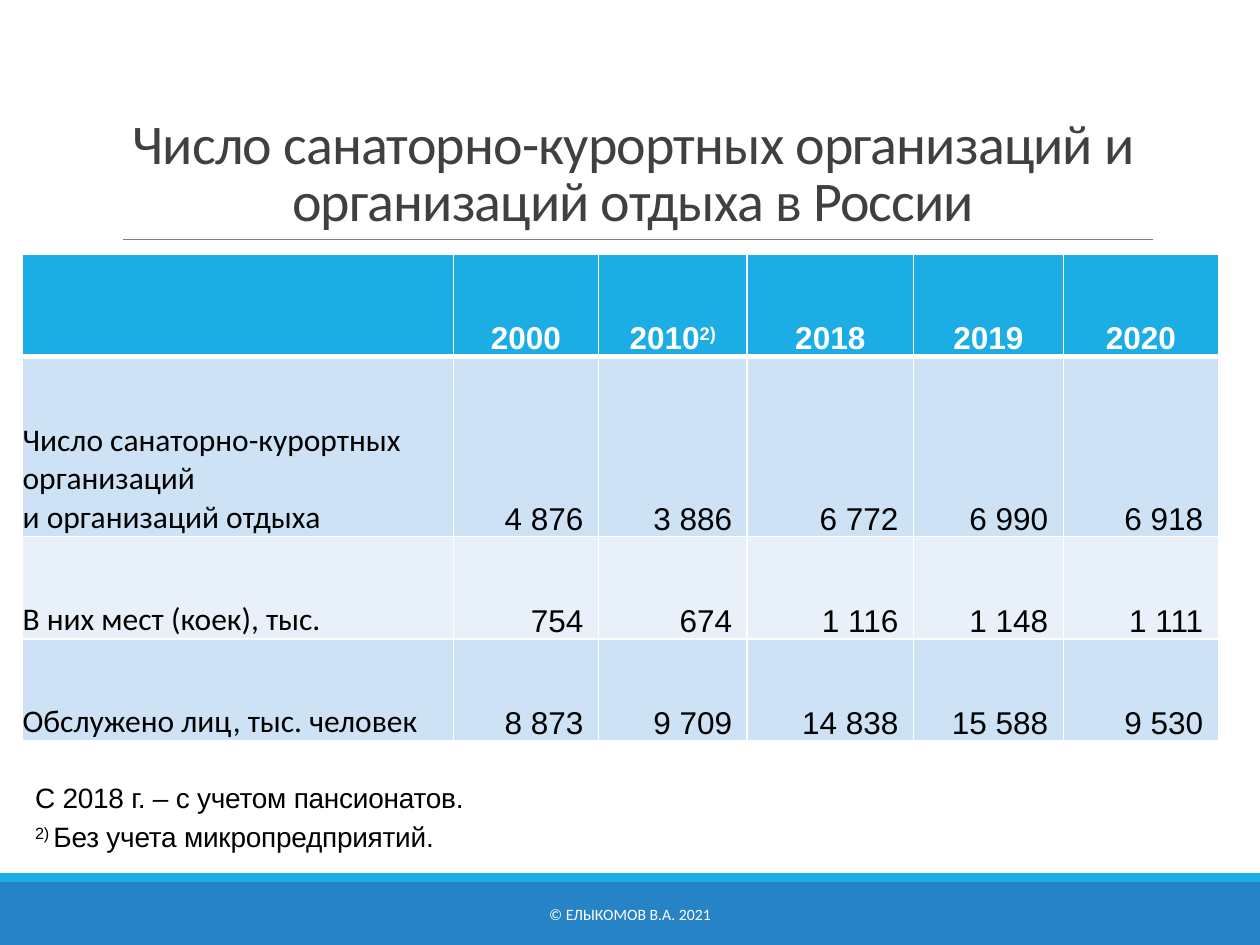
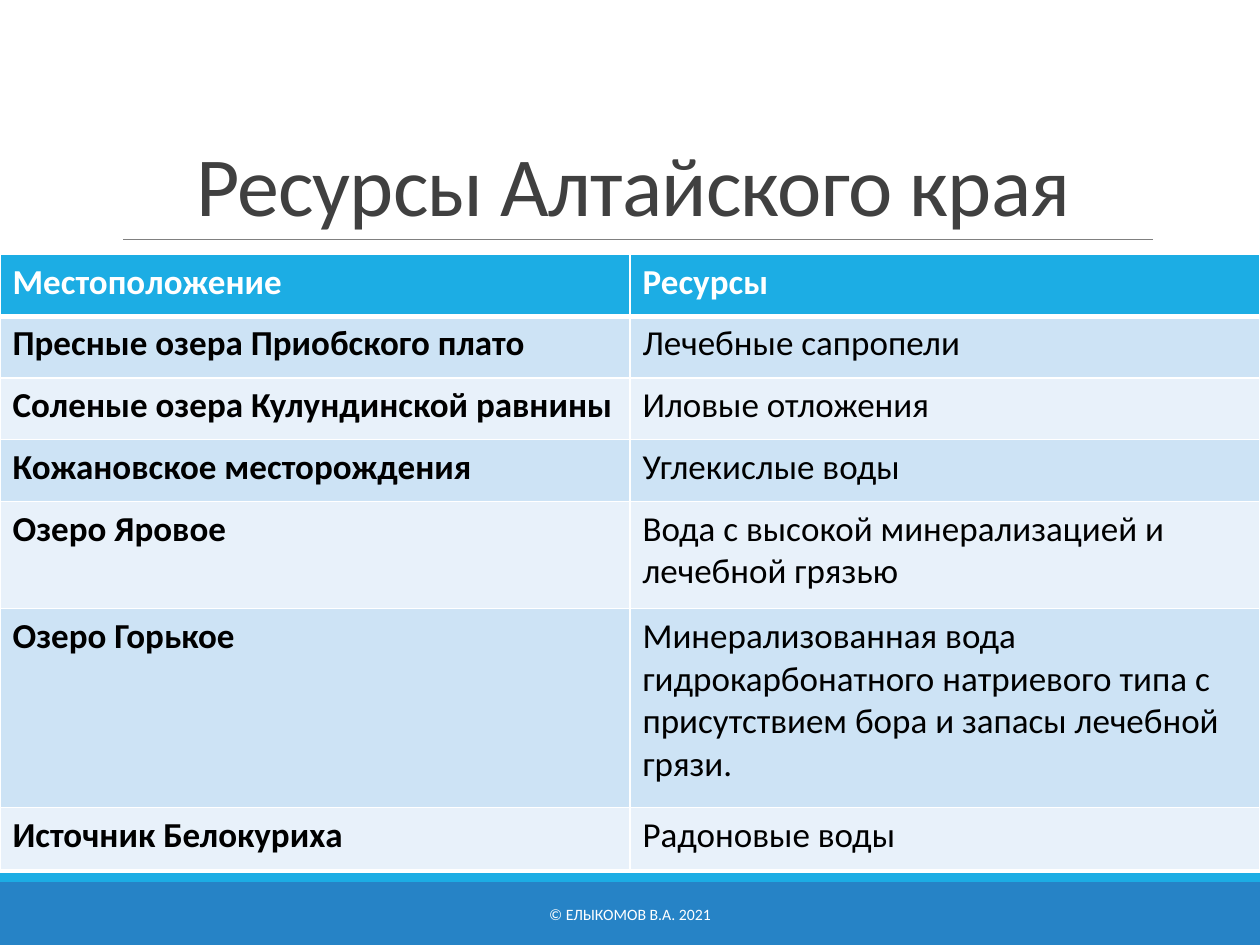
from dataclasses import dataclass
from typing import NamedTuple, Optional

from lxml.etree import SubElement
from pptx import Presentation
from pptx.dml.color import RGBColor
from pptx.enum.shapes import MSO_CONNECTOR, MSO_SHAPE
from pptx.enum.text import MSO_ANCHOR, PP_ALIGN
from pptx.oxml import parse_xml
from pptx.oxml.ns import nsdecls, qn
from pptx.util import Inches, Pt

COLORS = {
    "band": "2683C6",
    "accent": "1CADE4",
    "rule": "808080",
    "title": "404040",
    "text": "000000",
    "white": "FFFFFF",
    "odd": "CDE3F5",
    "even": "E8F1FA",
}
HEAD_FONT, DATA_FONT = "Calibri", "Arial"
WIDTH, HEIGHT = Inches(10), Inches(7.5)
COL, ROW = WIDTH // 100, HEIGHT // 75


class Box(NamedTuple):
    col: float
    row: float
    cols: float
    rows: float

    def emu(self) -> tuple[int, ...]:
        return (round(self.col * COL), round(self.row * ROW),
                round(self.cols * COL), round(self.rows * ROW))


class Style(NamedTuple):
    size: float
    font: str = HEAD_FONT
    color: str = "text"
    bold: bool = False
    spacing: float = 0


class Run(NamedTuple):
    text: str
    raised: bool = False


class Band(NamedTuple):
    box: Box
    color: str


@dataclass(frozen=True)
class Para:
    runs: tuple[Run, ...]
    style: Style
    align: PP_ALIGN = PP_ALIGN.LEFT
    line: Optional[float] = None
    before: float = 0
    after: float = 0
    hanging: float = 0


@dataclass(frozen=True)
class Cell:
    para: Para
    margins: Optional[tuple[float, float, float, float]] = None
    anchor: MSO_ANCHOR = MSO_ANCHOR.TOP


@dataclass(frozen=True)
class Grid:
    left: float
    top: float
    cols: tuple[float, ...]
    rows: tuple[float, ...]
    cells: list[list[Optional[Cell]]]


BANDS = (Band(Box(0, 70, 100, 5), "band"), Band(Box(0, 69.3, 100, 0.7), "accent"))
RULE = Box(9.8, 19, 81.7, 0)
TITLE = Box(9, 3.1, 82.5, 15.9)
FOOTER = Box(30.2, 70.6, 39.6, 4)
NOTES = Box(1.8, 61.1, 38.3, 7)


def rgb(name: str) -> RGBColor:
    return RGBColor.from_string(COLORS[name])


def write_para(p, para: Para) -> None:
    p.alignment = para.align
    p.space_before, p.space_after = Pt(para.before), Pt(para.after)
    if para.line:
        p.line_spacing = para.line
    if para.hanging:
        indent = round(para.hanging * COL)
        pPr = p._p.get_or_add_pPr()
        pPr.set("marL", str(indent))
        pPr.set("indent", str(-indent))
    for run in para.runs:
        for i, text in enumerate(run.text.split("\n")):
            if i:
                p.add_line_break()
            r = p.add_run()
            r.text = text
            style, font = para.style, r.font
            font.size, font.name, font.bold = Pt(style.size), style.font, style.bold
            font.color.rgb = rgb(style.color)
            rPr = r._r.get_or_add_rPr()
            if style.spacing:
                rPr.set("spc", str(round(style.spacing * 100)))
            if run.raised:
                rPr.set("baseline", "30000")


def add_text(slide, box: Box, paras: list[Para], anchor=MSO_ANCHOR.TOP) -> None:
    tf = slide.shapes.add_textbox(*box.emu()).text_frame
    tf.word_wrap = True
    tf.vertical_anchor = anchor
    for i, para in enumerate(paras):
        write_para(tf.add_paragraph() if i else tf.paragraphs[0], para)


def add_band(slide, band: Band) -> None:
    sp = slide.shapes.add_shape(MSO_SHAPE.RECTANGLE, *band.box.emu())
    sp.shadow.inherit = False
    sp.fill.solid()
    sp.fill.fore_color.rgb = rgb(band.color)
    sp.line.fill.background()


def add_rule(slide, box: Box) -> None:
    x, y, w, h = box.emu()
    line = slide.shapes.add_connector(MSO_CONNECTOR.STRAIGHT, x, y, x + w, y + h)
    line.line.color.rgb = rgb("rule")
    line.line.width = Pt(0.5)
    SubElement(line._element.spPr, qn("a:effectLst"))


def set_borders(cell, top: float, bottom: float) -> None:
    tcPr = cell._tc.get_or_add_tcPr()
    for i, (side, width) in enumerate((("L", 1), ("R", 1), ("T", top), ("B", bottom))):
        tcPr.insert(i, parse_xml(
            f'<a:ln{side} {nsdecls("a")} w="{Pt(width)}"><a:solidFill>'
            f'<a:srgbClr val="{COLORS["white"]}"/></a:solidFill></a:ln{side}>'))


def add_grid(slide, grid: Grid) -> None:
    box = Box(grid.left, grid.top, sum(grid.cols), sum(grid.rows))
    table = slide.shapes.add_table(len(grid.rows), len(grid.cols), *box.emu()).table
    table.first_row = table.horz_banding = False
    for column, width in zip(table.columns, grid.cols):
        column.width = round(width * COL)
    for i, (row, height) in enumerate(zip(table.rows, grid.rows)):
        row.height = round(height * ROW)
        fill = "accent" if i == 0 else "odd" if i % 2 else "even"
        for cell, content in zip(row.cells, grid.cells[i]):
            cell.fill.solid()
            cell.fill.fore_color.rgb = rgb(fill)
            set_borders(cell, 3 if i == 1 else 1, 3 if i == 0 else 1)
            if content is None:
                continue
            cell.vertical_anchor = content.anchor
            if content.margins:
                (cell.margin_left, cell.margin_top, cell.margin_right,
                 cell.margin_bottom) = (round(m * COL) for m in content.margins)
            write_para(cell.text_frame.paragraphs[0], content.para)


def add_slide(prs, title: str, size: float):
    slide = prs.slides.add_slide(prs.slide_layouts[6])
    for band in BANDS:
        add_band(slide, band)
    add_rule(slide, RULE)
    heading = Style(size, color="title", spacing=-0.5)
    add_text(slide, TITLE, [Para((Run(title),), heading, PP_ALIGN.CENTER, 0.85)],
             MSO_ANCHOR.BOTTOM)
    credit = Para((Run("© ЕЛЫКОМОВ В.А. 2021"),), Style(9, color="white"), PP_ALIGN.CENTER)
    add_text(slide, FOOTER, [credit], MSO_ANCHOR.MIDDLE)
    return slide


def year_cell(*runs: Run) -> Cell:
    style = Style(18, DATA_FONT, "white", True)
    return Cell(Para(runs, style, PP_ALIGN.CENTER, 1.15, 3, 3), (0, 0, 0, 0), MSO_ANCHOR.BOTTOM)


def label_cell(text: str) -> Cell:
    return Cell(Para((Run(text),), Style(18), before=0.8), (0, 0, 0, 0), MSO_ANCHOR.BOTTOM)


def value_cell(value: int) -> Cell:
    text = f"{value:,}".replace(",", " ")
    para = Para((Run(text),), Style(18, DATA_FONT), PP_ALIGN.RIGHT, Pt(7), 0.8)
    return Cell(para, (0, 0, 1.2, 0), MSO_ANCHOR.BOTTOM)


def resource_cell(text: str, color: str, bold: bool) -> Cell:
    return Cell(Para((Run(text),), Style(20, color=color, bold=bold)))


def add_resorts_slide(prs) -> None:
    slide = add_slide(
        prs, "Число санаторно-курортных организаций и организаций отдыха в России", 32)
    years = [(Run("2000"),), (Run("2010"), Run("2)", True)),
             (Run("2018"),), (Run("2019"),), (Run("2020"),)]
    data = {
        "Число санаторно-курортных организаций\nи организаций отдыха":
            (4876, 3886, 6772, 6990, 6918),
        "В них мест (коек), тыс.": (754, 674, 1116, 1148, 1111),
        "Обслужено лиц, тыс. человек": (8873, 9709, 14838, 15588, 9530),
    }
    cells = [[None, *(year_cell(*runs) for runs in years)]]
    cells += [[label_cell(label), *map(value_cell, values)] for label, values in data.items()]
    add_grid(slide, Grid(1.8, 20.2, (34.2, 11.5, 11.8, 13.2, 11.9, 12.3),
                         (8.1, 14.3, 8.1, 8.1), cells))
    style = Style(16, DATA_FONT, spacing=-0.1)
    notes = [((Run("С 2018 г. – с учетом пансионатов."),), 3),
             ((Run("2) ", True), Run("Без учета микропредприятий.")), 0)]
    add_text(slide, NOTES, [Para(runs, style, PP_ALIGN.JUSTIFY, 1.15, before, hanging=0.8)
                            for runs, before in notes])


def add_resources_slide(prs) -> None:
    slide = add_slide(prs, "Ресурсы Алтайского края", 48)
    rows = [
        ("Местоположение", "Ресурсы"),
        ("Пресные озера Приобского плато", "Лечебные сапропели"),
        ("Соленые озера Кулундинской равнины", "Иловые отложения"),
        ("Кожановское месторождения", "Углекислые воды"),
        ("Озеро Яровое", "Вода с высокой минерализацией и лечебной грязью"),
        ("Озеро Горькое", "Минерализованная вода гидрокарбонатного натриевого типа "
                          "с присутствием бора и запасы лечебной грязи."),
        ("Источник Белокуриха", "Радоновые воды"),
    ]
    cells = [[resource_cell(text, "text" if i else "white", i == 0 or j == 0)
              for j, text in enumerate(row)] for i, row in enumerate(rows)]
    add_grid(slide, Grid(0, 20.2, (50, 50), (4.9,) * 4 + (8.5, 15.8, 4.9), cells))


def main() -> None:
    prs = Presentation()
    prs.slide_width, prs.slide_height = WIDTH, HEIGHT
    add_resorts_slide(prs)
    add_resources_slide(prs)
    prs.save("out.pptx")


if __name__ == "__main__":
    main()
